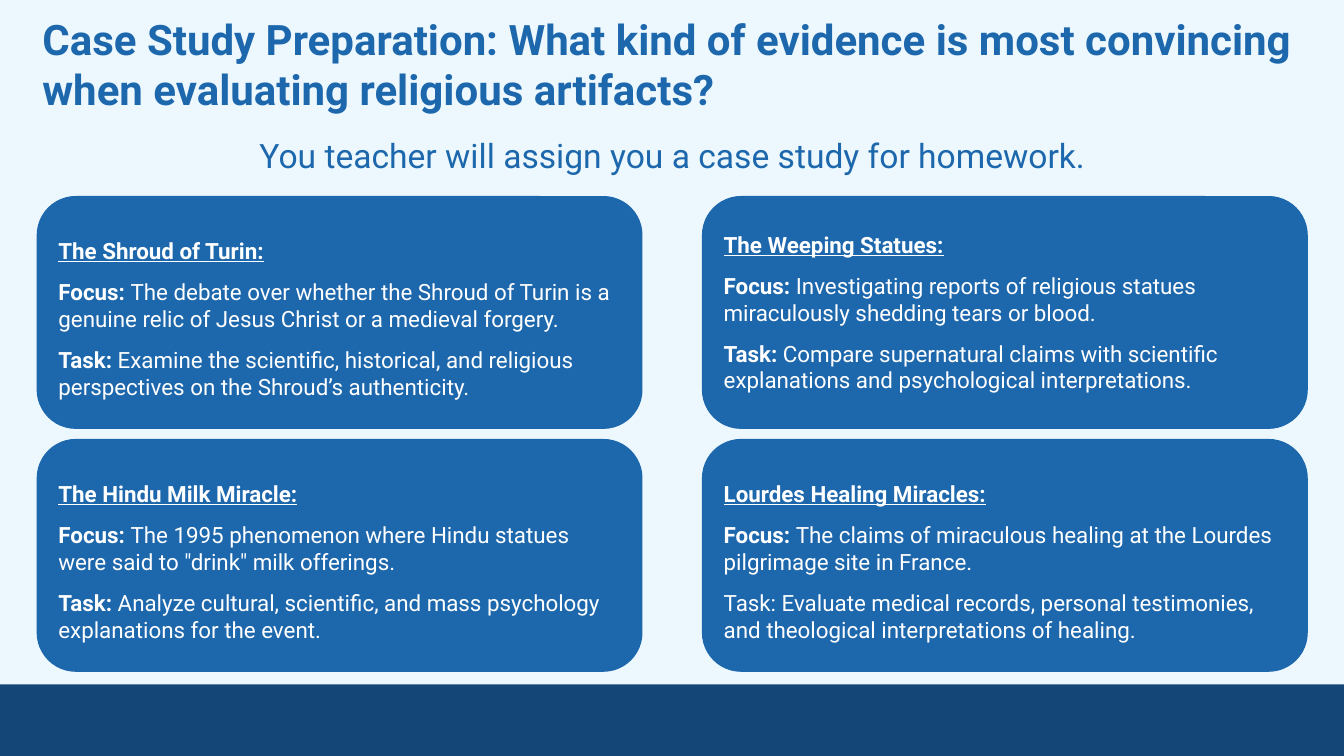
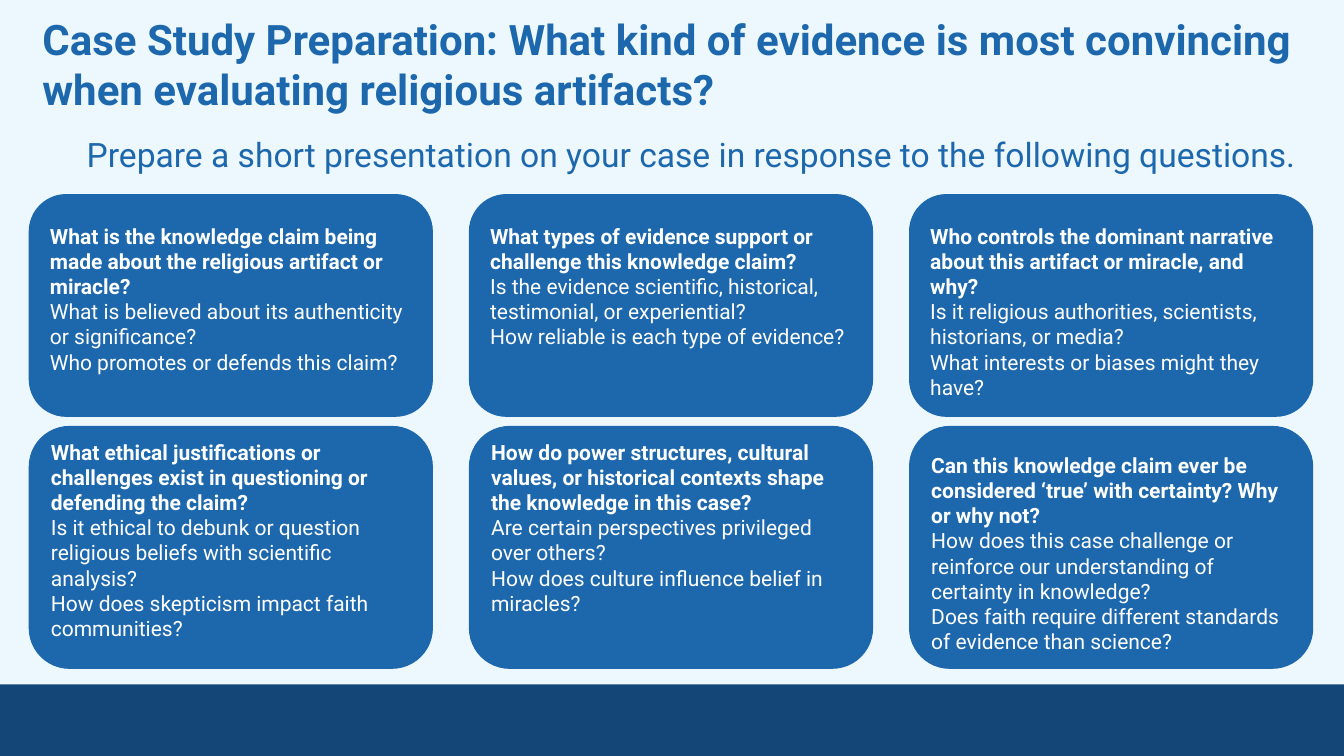
from dataclasses import dataclass

from pptx import Presentation
from pptx.dml.color import RGBColor
from pptx.enum.shapes import MSO_SHAPE
from pptx.enum.text import MSO_ANCHOR, PP_ALIGN
from pptx.shapes.autoshape import Shape
from pptx.slide import Slide
from pptx.util import Pt

COLORS = {"page": "ECF8FE", "band": "144777", "blue": "1D67AC", "white": "FFFFFF"}
FONT = "Roboto"
TITLE = ("Case Study Preparation: What kind of evidence is most convincing "
         "when evaluating religious artifacts?")


@dataclass(frozen=True)
class Run:
    text: str
    bold: bool = False
    underline: bool = False


@dataclass(frozen=True)
class Card:
    paragraphs: list[list[Run]]
    inset: float


@dataclass(frozen=True)
class Grid:
    lefts: list[float]
    tops: list[float]
    width: float
    heights: list[float]
    size: float
    gap: float


def case_card(name: str, focus: str, task: str, inset: float = 21,
              bold_task: bool = True) -> Card:
    return Card([[Run(name, True, True)],
                 [Run("Focus: ", True), Run(focus)],
                 [Run("Task: ", bold_task), Run(task)]], inset)


def question_card(question: str, *prompts: str, inset: float = 12.7) -> Card:
    return Card([[Run(question, True)], *[[Run(prompt)] for prompt in prompts]], inset)


CASES = [
    case_card("The Shroud of Turin:",
              "The debate over whether the Shroud of Turin is a genuine relic "
              "of Jesus Christ or a medieval forgery.",
              "Examine the scientific, historical, and religious perspectives "
              "on the Shroud’s authenticity."),
    case_card("The Weeping Statues:",
              "Investigating reports of religious statues miraculously "
              "shedding tears or blood.",
              "Compare supernatural claims with scientific explanations and "
              "psychological interpretations.", inset=16.6),
    case_card("The Hindu Milk Miracle:",
              "The 1995 phenomenon where Hindu statues were said to \"drink\" "
              "milk offerings.",
              "Analyze cultural, scientific, and mass psychology explanations "
              "for the event."),
    case_card("Lourdes Healing Miracles:",
              "The claims of miraculous healing at the Lourdes pilgrimage site "
              "in France.",
              "Evaluate medical records, personal testimonies, and theological "
              "interpretations of healing.", bold_task=False),
]

QUESTIONS = [
    question_card("What is the knowledge claim being made about the religious "
                  "artifact or miracle?",
                  "What is believed about its authenticity or significance?",
                  "Who promotes or defends this claim?"),
    question_card("What types of evidence support or challenge this knowledge claim?",
                  "Is the evidence scientific, historical, testimonial, or experiential?",
                  "How reliable is each type of evidence?"),
    question_card("Who controls the dominant narrative about this artifact or "
                  "miracle, and why?",
                  "Is it religious authorities, scientists, historians, or media?",
                  "What interests or biases might they have?"),
    question_card("What ethical justifications or challenges exist in questioning "
                  "or defending the claim?",
                  "Is it ethical to debunk or question religious beliefs with "
                  "scientific analysis?",
                  "How does skepticism impact faith communities?", inset=0.6),
    question_card("How do power structures, cultural values, or historical contexts "
                  "shape the knowledge in this case?",
                  "Are certain perspectives privileged over others?",
                  "How does culture influence belief in miracles?", inset=0.6),
    question_card("Can this knowledge claim ever be considered ‘true’ with "
                  "certainty? Why or why not?",
                  "How does this case challenge or reinforce our understanding of "
                  "certainty in knowledge?",
                  "Does faith require different standards of evidence than science?",
                  inset=10),
]

CASE_GRID = Grid([26.6, 501.8], [140.4, 313.9], 432, [165.6, 165.6], 16, 10)
QUESTION_GRID = Grid([20.9 + 314.4 * i for i in range(3)], [139, 304.6], 288,
                     [158.4, 172.8], 15, 0)


def write_text(sp: Shape, paragraphs: list[list[Run]], *, size: float, color: str,
               align: PP_ALIGN = PP_ALIGN.LEFT, margin: float = 7.2,
               top: float = 7.2, gap: float = 0) -> None:
    tf = sp.text_frame
    tf.word_wrap = True
    tf.vertical_anchor = MSO_ANCHOR.TOP
    tf.margin_left = tf.margin_right = Pt(margin)
    tf.margin_top, tf.margin_bottom = Pt(top), Pt(0)
    for i, runs in enumerate(paragraphs):
        p = tf.add_paragraph() if i else tf.paragraphs[0]
        p.alignment = align
        if i and gap:
            p.space_before = Pt(gap)
        for run in runs:
            r = p.add_run()
            r.text = run.text
            r.font.name = FONT
            r.font.size = Pt(size)
            r.font.bold = run.bold
            r.font.underline = run.underline
            r.font.color.rgb = RGBColor.from_string(COLORS[color])


def add_box(s: Slide, kind: MSO_SHAPE, left: float, top: float, width: float,
            height: float, color: str) -> Shape:
    sp = s.shapes.add_shape(kind, Pt(left), Pt(top), Pt(width), Pt(height))
    sp.shadow.inherit = False
    sp.fill.solid()
    sp.fill.fore_color.rgb = RGBColor.from_string(COLORS[color])
    sp.line.color.rgb = RGBColor.from_string(COLORS[color])
    sp.line.width = Pt(0.75)
    return sp


def add_label(s: Slide, left: float, top: float, width: float, height: float) -> Shape:
    return s.shapes.add_textbox(Pt(left), Pt(top), Pt(width), Pt(height))


def add_cards(s: Slide, grid: Grid, cards: list[Card]) -> None:
    for i, card in enumerate(cards):
        row, col = divmod(i, len(grid.lefts))
        sp = add_box(s, MSO_SHAPE.ROUNDED_RECTANGLE, grid.lefts[col], grid.tops[row],
                     grid.width, grid.heights[row], "blue")
        write_text(sp, card.paragraphs, size=grid.size, color="white",
                   top=card.inset, gap=grid.gap)


def add_slide(prs: Presentation, subtitle: str, left: float, top: float,
              width: float, grid: Grid, cards: list[Card]) -> None:
    s = prs.slides.add_slide(prs.slide_layouts[6])
    s.background.fill.solid()
    s.background.fill.fore_color.rgb = RGBColor.from_string(COLORS["page"])
    band = add_box(s, MSO_SHAPE.RECTANGLE, 0, 488.9, 960, 51.1, "band")
    band.line.fill.background()
    write_text(add_label(s, 20.9, 0, 927, 90), [[Run(TITLE, True)]],
               size=30, color="blue", margin=9.4, top=9.4)
    add_cards(s, grid, cards)
    write_text(add_label(s, left, top, width, 44), [[Run(subtitle)]],
               size=24, color="blue", align=PP_ALIGN.CENTER)


def main() -> None:
    prs = Presentation()
    prs.slide_width, prs.slide_height = Pt(960), Pt(540)
    add_slide(prs, "You teacher will assign you a case study for homework.",
              51.1, 89.3, 858.2, CASE_GRID, CASES)
    add_slide(prs, "Prepare a short presentation on your case in response to the "
              "following questions.", 49.7, 88.6, 887.8, QUESTION_GRID, QUESTIONS)
    prs.save("out.pptx")


if __name__ == "__main__":
    main()
